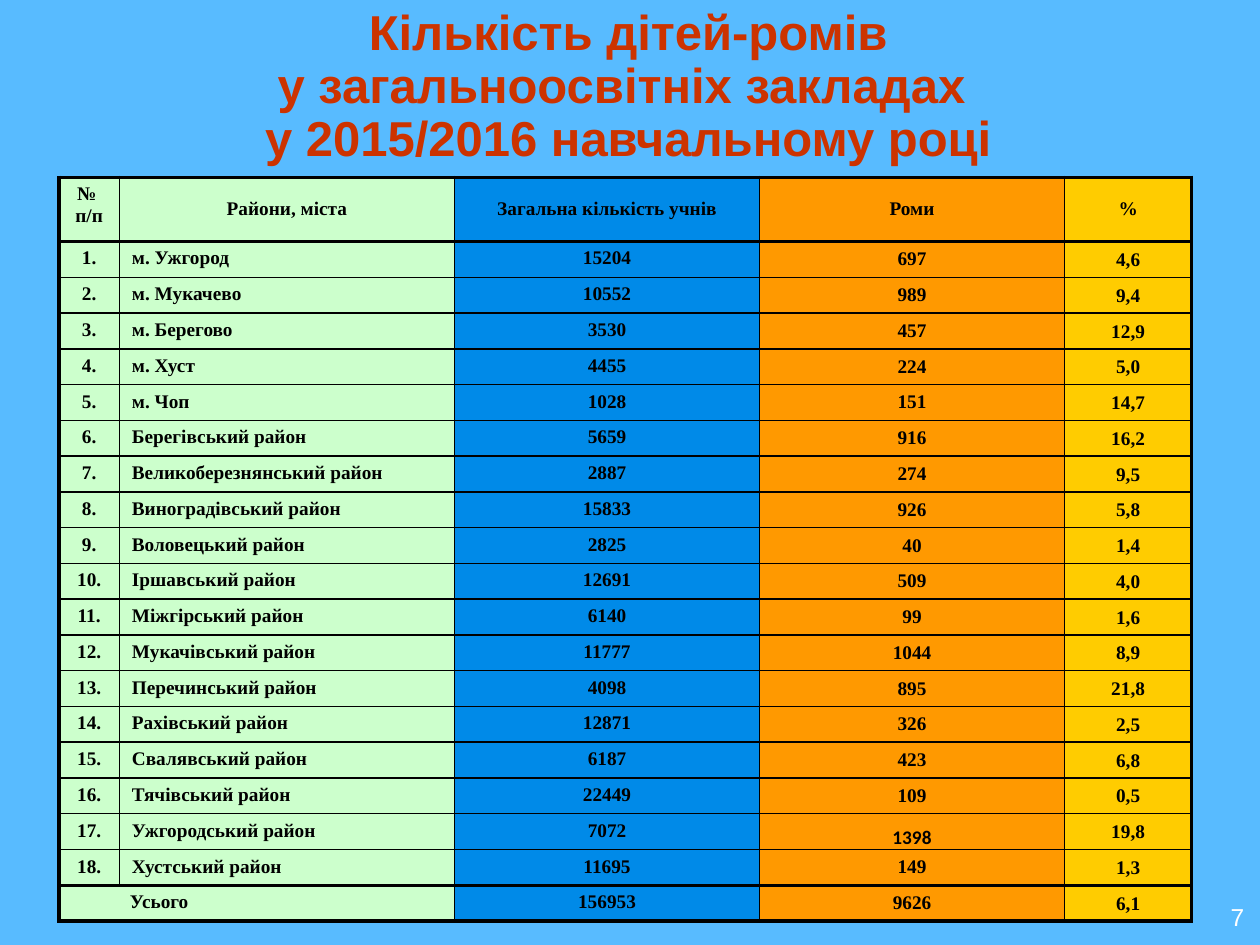
from lxml.etree import SubElement
from pptx import Presentation
from pptx.dml.color import RGBColor
from pptx.enum.text import MSO_ANCHOR, PP_ALIGN
from pptx.oxml.ns import qn
from pptx.util import Pt

COLORS = {
    "background": "58BBFF", "title": "CC3300", "page": "FFFFFF", "ink": "000000",
    "district": "CCFFCC", "pupils": "008AE8", "roma": "FF9900", "share": "FFCC00",
}
COLUMN_FILLS = ("district", "district", "pupils", "roma", "share")
COLUMN_WIDTHS = (34.4, 191.6, 174.3, 174.3, 72.7)
HEADER_HEIGHT, ROW_HEIGHT = 36.7, 19.5
HEAVY, THIN = 2.25, 1
HANGING = 27

TITLE_LINES = (
    "Кількість дітей-ромів",
    "у загальноосвітніх закладах ",
    "у 2015/2016 навчальному році",
)
HEADERS = ("№ \nп/п", "Райони, міста", "Загальна кількість учнів", "Роми", "%")
DISTRICTS = (
    ("м. Ужгород", "15204", "697", "4,6"),
    ("м. Мукачево", "10552", "989", "9,4"),
    ("м. Берегово", "3530", "457", "12,9"),
    ("м. Хуст", "4455", "224", "5,0"),
    ("м. Чоп", "1028", "151", "14,7"),
    ("Берегівський район", "5659", "916", "16,2"),
    ("Великоберезнянський район", "2887", "274", "9,5"),
    ("Виноградівський район", "15833", "926", "5,8"),
    ("Воловецький район", "2825", "40", "1,4"),
    ("Іршавський район", "12691", "509", "4,0"),
    ("Міжгірський район", "6140", "99", "1,6"),
    ("Мукачівський район", "11777", "1044", "8,9"),
    ("Перечинський район", "4098", "895", "21,8"),
    ("Рахівський район", "12871", "326", "2,5"),
    ("Свалявський район", "6187", "423", "6,8"),
    ("Тячівський район", "22449", "109", "0,5"),
    ("Ужгородський район", "7072", "1398", "19,8"),
    ("Хустський район", "11695", "149", "1,3"),
)
TOTALS = ("Усього", "", "156953", "9626", "6,1")


def rgb(name):
    return RGBColor.from_string(COLORS[name])


def add_run(paragraph, text, size, color, font="Arial", bold=False):
    run = paragraph.add_run()
    run.text = text
    run.font.size, run.font.name, run.font.bold = Pt(size), font, bold
    run.font.color.rgb = rgb(color)


def add_text_frame(slide, box, anchor, align):
    frame = slide.shapes.add_textbox(*map(Pt, box)).text_frame
    frame.word_wrap = True
    frame.vertical_anchor = anchor
    frame.paragraphs[0].alignment = align
    return frame


def add_title(slide, box):
    frame = add_text_frame(slide, box, MSO_ANCHOR.MIDDLE, PP_ALIGN.CENTER)
    paragraph = frame.paragraphs[0]
    paragraph.line_spacing = 0.9
    for index, line in enumerate(TITLE_LINES):
        if index:
            paragraph.add_line_break()
        add_run(paragraph, line, 28, "title", bold=True)


def add_page_number(slide, box):
    frame = add_text_frame(slide, box, MSO_ANCHOR.BOTTOM, PP_ALIGN.RIGHT)
    add_run(frame.paragraphs[0], "7", 14, "page")


def set_borders(cell, left, right, top, bottom):
    properties = cell._tc.get_or_add_tcPr()
    for tag, width in zip(("a:lnL", "a:lnR", "a:lnT", "a:lnB"), (left, right, top, bottom)):
        line = SubElement(properties, qn(tag), w=str(Pt(width)))
        fill = SubElement(line, qn("a:solidFill"))
        SubElement(fill, qn("a:srgbClr"), val=COLORS["ink"])


def write_cell(cell, text, align, hanging, font):
    for index, line in enumerate(text.split("\n")):
        frame = cell.text_frame
        paragraph = frame.add_paragraph() if index else frame.paragraphs[0]
        paragraph.alignment = align
        if hanging:
            properties = paragraph._p.get_or_add_pPr()
            properties.set("marL", str(Pt(HANGING)))
            properties.set("indent", str(Pt(-HANGING)))
        if font == "Calibri":
            paragraph.line_spacing = 1.5
        add_run(paragraph, line, 11, "ink", font, bold=True)


def add_district_table(slide, left, top):
    numbered = [(f"{n}.", *district) for n, district in enumerate(DISTRICTS, 1)]
    rows = [HEADERS, *numbered, TOTALS]
    last_row, last_column = len(rows) - 1, len(HEADERS) - 1
    height = HEADER_HEIGHT + last_row * ROW_HEIGHT
    table = slide.shapes.add_table(
        len(rows), len(HEADERS), Pt(left), Pt(top), Pt(sum(COLUMN_WIDTHS)), Pt(height)
    ).table
    for column, width in zip(table.columns, COLUMN_WIDTHS):
        column.width = Pt(width)
    for r, row in enumerate(table.rows):
        row.height = Pt(ROW_HEIGHT if r else HEADER_HEIGHT)
    table.cell(last_row, 0).merge(table.cell(last_row, 1))

    for r, values in enumerate(rows):
        for c, value in enumerate(values):
            cell = table.cell(r, c)
            set_borders(
                cell,
                left=HEAVY if c == 0 else THIN,
                right=HEAVY if c == last_column else THIN,
                top=HEAVY if r in (0, 1, last_row) else THIN,
                bottom=HEAVY if r in (0, last_row - 1, last_row) else THIN,
            )
            cell.fill.solid()
            cell.fill.fore_color.rgb = rgb(COLUMN_FILLS[c])
            if cell.is_spanned:
                continue
            compact = r > 0 and c >= 3
            if compact or (r == 0 and c > 0):
                cell.vertical_anchor = MSO_ANCHOR.MIDDLE
            if compact:
                cell.margin_left = cell.margin_right = Pt(5 if c == 3 else 0.7)
                cell.margin_top = Pt(0 if c == 3 else 0.7)
                cell.margin_bottom = Pt(0)
            if cell.is_merge_origin:
                cell.margin_left = Pt(40.5)
            named = r > 0 and (c == 1 or cell.is_merge_origin)
            write_cell(
                cell, value,
                align=PP_ALIGN.LEFT if named else PP_ALIGN.CENTER,
                hanging=not compact,
                font="Calibri" if value == "1398" else "Times New Roman",
            )


def main():
    presentation = Presentation()
    presentation.slide_width, presentation.slide_height = Pt(720), Pt(540)
    slide = presentation.slides.add_slide(presentation.slide_layouts[6])
    slide.background.fill.solid()
    slide.background.fill.fore_color.rgb = rgb("background")
    add_title(slide, (35, 5, 648, 90))
    add_district_table(slide, 33.8, 101.3)
    add_page_number(slide, (550, 498, 168, 37.5))
    presentation.save("out.pptx")


if __name__ == "__main__":
    main()
